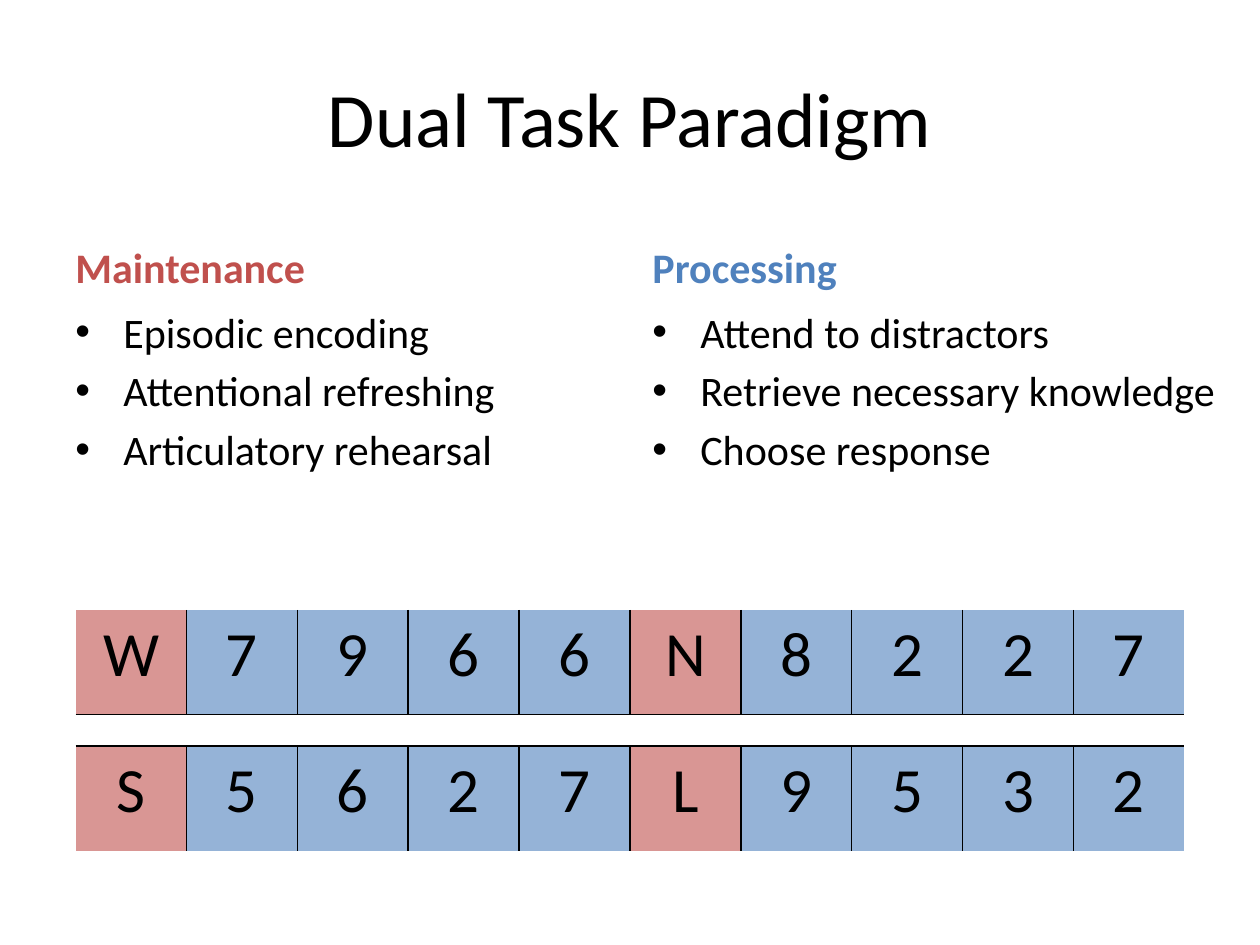
from lxml import etree
from pptx import Presentation
from pptx import util as u
from pptx.dml.color import RGBColor
from pptx.enum import text
from pptx.oxml import ns

THEME = {
    "font": "Calibri",
    "bullet_font": "Arial",
    "ink": "000000",
    "maintenance": "C0504D",
    "processing": "4F81BD",
    "letter_fill": "D99694",
    "digit_fill": "95B3D7",
    "title_size": 44,
    "body_size": 24,
    "cell_size": 36,
    "spacer_size": 8,
}

TITLE = "Dual Task Paradigm"
COLUMNS = [
    ("Maintenance", "maintenance", 0.5, 4.42,
     ["Episodic encoding", "Attentional refreshing", "Articulatory rehearsal"]),
    ("Processing", "processing", 5.08, 4.68,
     ["Attend to distractors", "Retrieve necessary knowledge", "Choose response"]),
]
SEQUENCES = ["W7966N8227", "", "S5627L9532"]
ROW_HEIGHTS = [0.83, 0.25, 0.83]
COLUMN_WIDTH = 0.88
HEADING_TOP, HEADING_HEIGHT = 1.67, 0.7
LIST_TOP, LIST_HEIGHT = 2.38, 3.93
BULLET_INDENT = 0.38


def color(name):
    return RGBColor.from_string(THEME[name])


def style(paragraph, size, ink="ink", bold=False):
    font = paragraph.font
    font.name = THEME["font"]
    font.size = u.Pt(THEME[size])
    font.color.rgb = color(ink)
    font.bold = bold


def add_bullet(paragraph):
    properties = paragraph._p.get_or_add_pPr()
    indent = u.Inches(BULLET_INDENT)
    properties.set("marL", str(indent))
    properties.set("indent", str(-indent))
    for tag, attributes in (("a:buFont", {"typeface": THEME["bullet_font"]}),
                            ("a:buChar", {"char": "•"})):
        bullet = etree.Element(ns.qn(tag), attributes)
        properties.insert_element_before(bullet, "a:tabLst", "a:defRPr", "a:extLst")


def add_text(slide, box, lines, anchor, ink="ink", bold=False, bullets=False):
    shape = slide.shapes.add_textbox(*map(u.Inches, box))
    frame = shape.text_frame
    frame.word_wrap = True
    frame.vertical_anchor = anchor
    frame.text = "\n".join(lines)
    for paragraph in frame.paragraphs:
        paragraph.space_before = u.Pt(THEME["body_size"] * 0.2)
        style(paragraph, "body_size", ink, bold)
        if bullets:
            add_bullet(paragraph)


def set_borders(cell, visible):
    properties = cell._tc.get_or_add_tcPr()
    for side in ("L", "R", "T", "B"):
        line = etree.SubElement(properties, ns.qn(f"a:ln{side}"), w=str(u.Pt(1)))
        if side in visible:
            fill = etree.SubElement(line, ns.qn("a:solidFill"))
            etree.SubElement(fill, ns.qn("a:srgbClr"), val=THEME["ink"])
        else:
            etree.SubElement(line, ns.qn("a:noFill"))


def fill_cell(cell, symbol):
    if symbol:
        cell.text = symbol
        paragraph = cell.text_frame.paragraphs[0]
        paragraph.alignment = text.PP_ALIGN.CENTER
        style(paragraph, "cell_size")
        cell.fill.solid()
        cell.fill.fore_color.rgb = color("letter_fill" if symbol.isalpha() else "digit_fill")
    else:
        paragraph = cell.text_frame.paragraphs[0]
        etree.SubElement(paragraph._p, ns.qn("a:endParaRPr"), sz=str(THEME["spacer_size"] * 100))
        cell.fill.background()


def add_sequence_table(slide):
    count = len(SEQUENCES[0])
    table = slide.shapes.add_table(
        len(SEQUENCES), count, u.Inches(0.6), u.Inches(4.84),
        u.Inches(COLUMN_WIDTH * count), u.Inches(sum(ROW_HEIGHTS))).table
    table.first_row = table.horz_banding = False
    for column in table.columns:
        column.width = u.Inches(COLUMN_WIDTH)
    for row_index, (sequence, height) in enumerate(zip(SEQUENCES, ROW_HEIGHTS)):
        table.rows[row_index].height = u.Inches(height)
        for column_index in range(count):
            visible = ("B", "TB", "T")[row_index]
            if sequence:
                visible += "L" * (column_index > 0) + "R" * (column_index < count - 1)
            cell = table.cell(row_index, column_index)
            set_borders(cell, visible)
            fill_cell(cell, sequence[column_index] if sequence else "")


def main():
    presentation = Presentation()
    presentation.slide_width, presentation.slide_height = u.Inches(10), u.Inches(7.5)
    slide = presentation.slides.add_slide(presentation.slide_layouts[5])

    title = slide.shapes.title
    title.left, title.top, title.width, title.height = map(u.Inches, (0.5, 0.3, 9, 1.25))
    title.text_frame.text = TITLE
    title.text_frame.vertical_anchor = text.MSO_ANCHOR.MIDDLE
    title.text_frame.paragraphs[0].alignment = text.PP_ALIGN.CENTER
    style(title.text_frame.paragraphs[0], "title_size")

    for heading, ink, left, width, items in COLUMNS:
        add_text(slide, (left, HEADING_TOP, width, HEADING_HEIGHT), [heading],
                 text.MSO_ANCHOR.BOTTOM, ink, bold=True)
        add_text(slide, (left, LIST_TOP, width, LIST_HEIGHT), items,
                 text.MSO_ANCHOR.TOP, bullets=True)

    add_sequence_table(slide)
    presentation.save("out.pptx")


if __name__ == "__main__":
    main()
